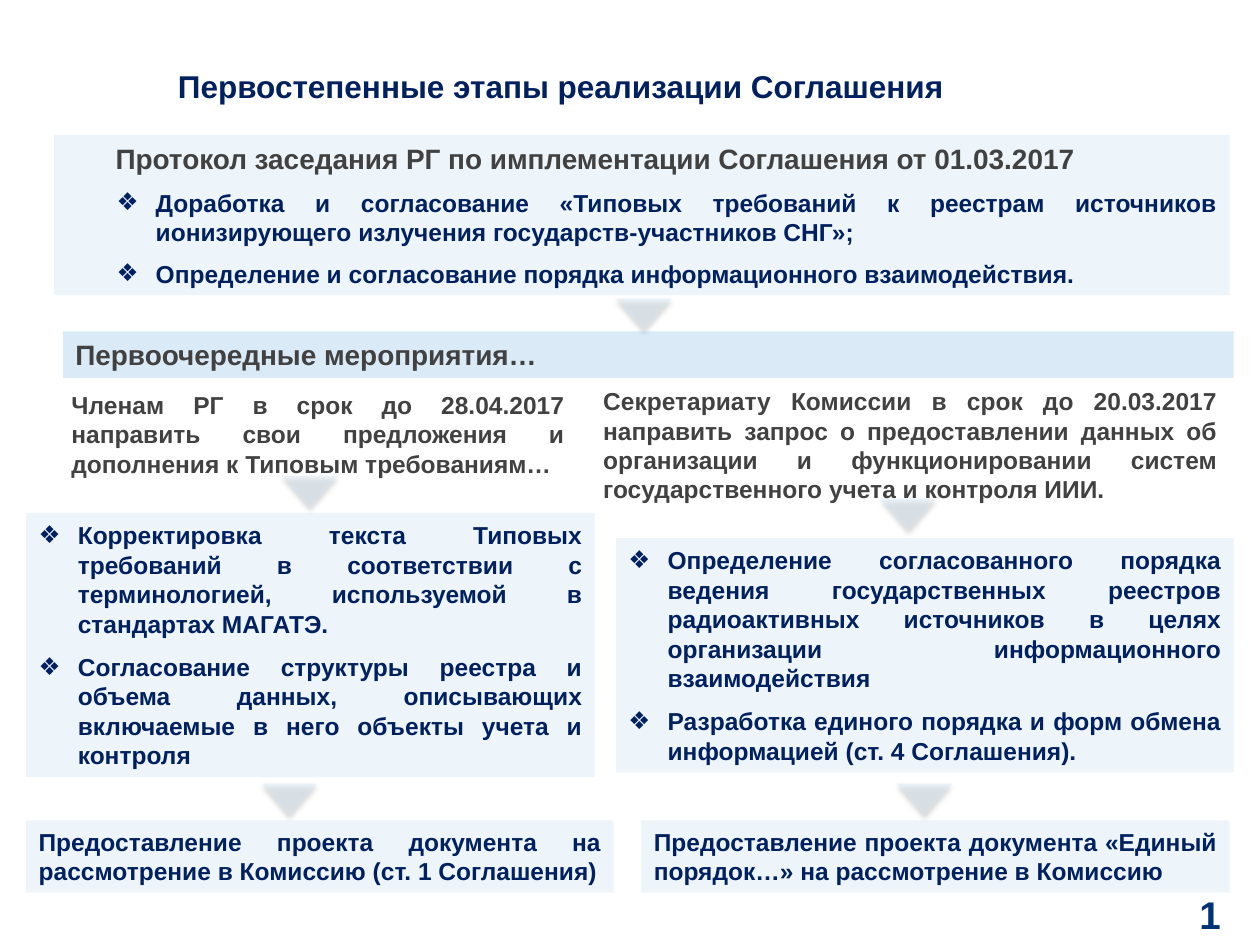
from pptx import Presentation
from pptx import util as u
from pptx.dml import color
from pptx.enum import shapes, text
from pptx.oxml import ns
from lxml import etree

NAVY, GRAY, SKY = "002060", "414142", "DAEAF6"
PALE, ARROW_ALPHA, SOLID = 47, 45, 100
BULLET = "❖"
HANG = 0.79

# Content: left, top, width, height in cm; fill opacity (None = no fill);
# space before in points; lines of (text, size, colour, left margin, bulleted)
BLOCKS = [
    ((1.09, 2.72, 23.7, 3.23), PALE, 3, [
        ("Протокол заседания РГ по имплементации Соглашения от 01.03.2017", 16, GRAY, 0.99, False),
        ("Доработка и согласование «Типовых требований к реестрам источников "
         "ионизирующего излучения государств-участников СНГ»;", 14, NAVY, 1.8, True),
        ("Определение и согласование порядка информационного взаимодействия.", 14, NAVY, 1.8, True)]),
    ((1.27, 6.68, 23.6, 0.94), SOLID, 3, [
        ("Первоочередные мероприятия…", 16, GRAY, 0, False)]),
    ((1.19, 7.72, 10.44, 2.06), None, 3, [
        ("Членам РГ в срок до 28.04.2017 направить свои предложения и "
         "дополнения к Типовым требованиям…", 14, GRAY, 0, False)]),
    ((11.91, 7.65, 12.88, 2.64), None, 3, [
        ("Секретариату Комиссии в срок до 20.03.2017 направить запрос о предоставлении данных об "
         "организации и функционировании систем государственного учета и контроля ИИИ.",
         14, GRAY, 0, False)]),
    ((0.53, 10.34, 11.46, 5.33), PALE, 4, [
        ("Корректировка текста Типовых требований в соответствии с терминологией, "
         "используемой в стандартах МАГАТЭ.", 14, NAVY, HANG, True),
        ("Согласование структуры реестра и объема данных, описывающих включаемые "
         "в него объекты учета и контроля", 14, NAVY, HANG, True)]),
    ((12.42, 10.85, 12.45, 4.72), PALE, 4, [
        ("Определение согласованного порядка ведения государственных реестров радиоактивных "
         "источников в целях организации информационного взаимодействия", 14, NAVY, HANG, True),
        ("Разработка единого порядка и форм обмена информацией (ст. 4 Соглашения).",
         14, NAVY, HANG, True)]),
    ((0.53, 16.54, 11.84, 1.45), PALE, 4, [
        ("Предоставление проекта документа на рассмотрение в Комиссию (ст. 1 Соглашения)",
         14, NAVY, 0, False)]),
    ((12.93, 16.54, 11.86, 1.45), PALE, 4, [
        ("Предоставление проекта документа «Единый порядок…» на рассмотрение в Комиссию",
         14, NAVY, 0, False)]),
]
ARROWS = [(12.42, 6.02), (5.69, 9.6), (17.75, 10.06), (5.28, 15.8), (18.08, 15.8)]
ARROW_SIZE = (1.12, 0.64)


def cm(values):
    return [u.Cm(value) for value in values]


def rgb(value):
    return color.RGBColor.from_string(value)


def add_child(parent, tag, **attributes):
    child = etree.SubElement(parent, ns.qn(tag))
    for name, value in attributes.items():
        child.set(name, str(value))
    return child


def paint(shape, opacity):
    shape.shadow.inherit = False
    shape.line.fill.background()
    shape.fill.solid()
    shape.fill.fore_color.rgb = rgb(SKY)
    if opacity < SOLID:
        fill = shape._element.spPr.find(ns.qn("a:solidFill"))
        add_child(fill[0], "a:alpha", val=opacity * 1000)


def write(para, words, size=14, ink=NAVY, align=text.PP_ALIGN.JUSTIFY,
          before=0, after=0, margin=0, bullet=False):
    props = para._p.get_or_add_pPr()
    props.set("marL", str(u.Cm(margin)))
    props.set("indent", str(-u.Cm(HANG) if bullet else 0))
    if bullet:
        add_child(props, "a:buFont", typeface="Arial")
        add_child(props, "a:buChar", char=BULLET)
    else:
        add_child(props, "a:buNone")
    para.alignment = align
    para.space_before, para.space_after = u.Pt(before), u.Pt(after)
    span = para.add_run()
    span.text = words
    span.font.name, span.font.size, span.font.bold = "Arial", u.Pt(size), True
    span.font.color.rgb = rgb(ink)


def prepare(box, inset=None):
    frame = box.text_frame
    frame.word_wrap = True
    frame.auto_size = text.MSO_AUTO_SIZE.NONE
    frame.vertical_anchor = text.MSO_ANCHOR.MIDDLE
    if inset is not None:
        frame.margin_left = frame.margin_right = u.Cm(inset)
        frame.margin_top = frame.margin_bottom = u.Cm(inset)
    return frame


def add_block(page, place, opacity, before, lines):
    if opacity is None:
        box = page.shapes.add_textbox(*cm(place))
    else:
        box = page.shapes.add_shape(shapes.MSO_SHAPE.RECTANGLE, *cm(place))
        paint(box, opacity)
    frame = prepare(box)
    for number, (words, size, ink, margin, bullet) in enumerate(lines):
        para = frame.add_paragraph() if number else frame.paragraphs[0]
        write(para, words, size=size, ink=ink, before=before if number else 0,
              after=4, margin=margin, bullet=bullet)


def add_arrow(page, place):
    arrow = page.shapes.add_shape(shapes.MSO_SHAPE.DOWN_ARROW, *cm(place + ARROW_SIZE))
    arrow.adjustments[0], arrow.adjustments[1] = 0.5, 1
    paint(arrow, ARROW_ALPHA)
    effects = arrow._element.spPr.find(ns.qn("a:effectLst"))
    shadow = add_child(effects, "a:outerShdw", blurRad=u.Pt(3.1), dist=u.Pt(1.8),
                       dir=90 * 60000, rotWithShape=0)
    add_child(add_child(shadow, "a:srgbClr", val="000000"), "a:alpha", val=35000)


def main():
    deck = Presentation()
    deck.slide_width, deck.slide_height = cm((25.4, 19.05))
    page = deck.slides.add_slide(deck.slide_layouts[5])

    # Title
    title = page.shapes.title
    title.left, title.top, title.width, title.height = cm((1.5, 0.81, 19.61, 1.85))
    write(prepare(title, inset=0).paragraphs[0], "Первостепенные этапы реализации Соглашения",
          size=18, align=text.PP_ALIGN.CENTER)

    # Steps and the arrows between them
    for block in BLOCKS:
        add_block(page, *block)
    for place in ARROWS:
        add_arrow(page, place)

    # Page number
    number = page.shapes.add_textbox(*cm((22.61, 17.91, 2, 1.04)))
    write(prepare(number, inset=0).paragraphs[0], "1", size=22, ink="003274",
          align=text.PP_ALIGN.RIGHT)

    deck.save("out.pptx")


if __name__ == "__main__":
    main()
